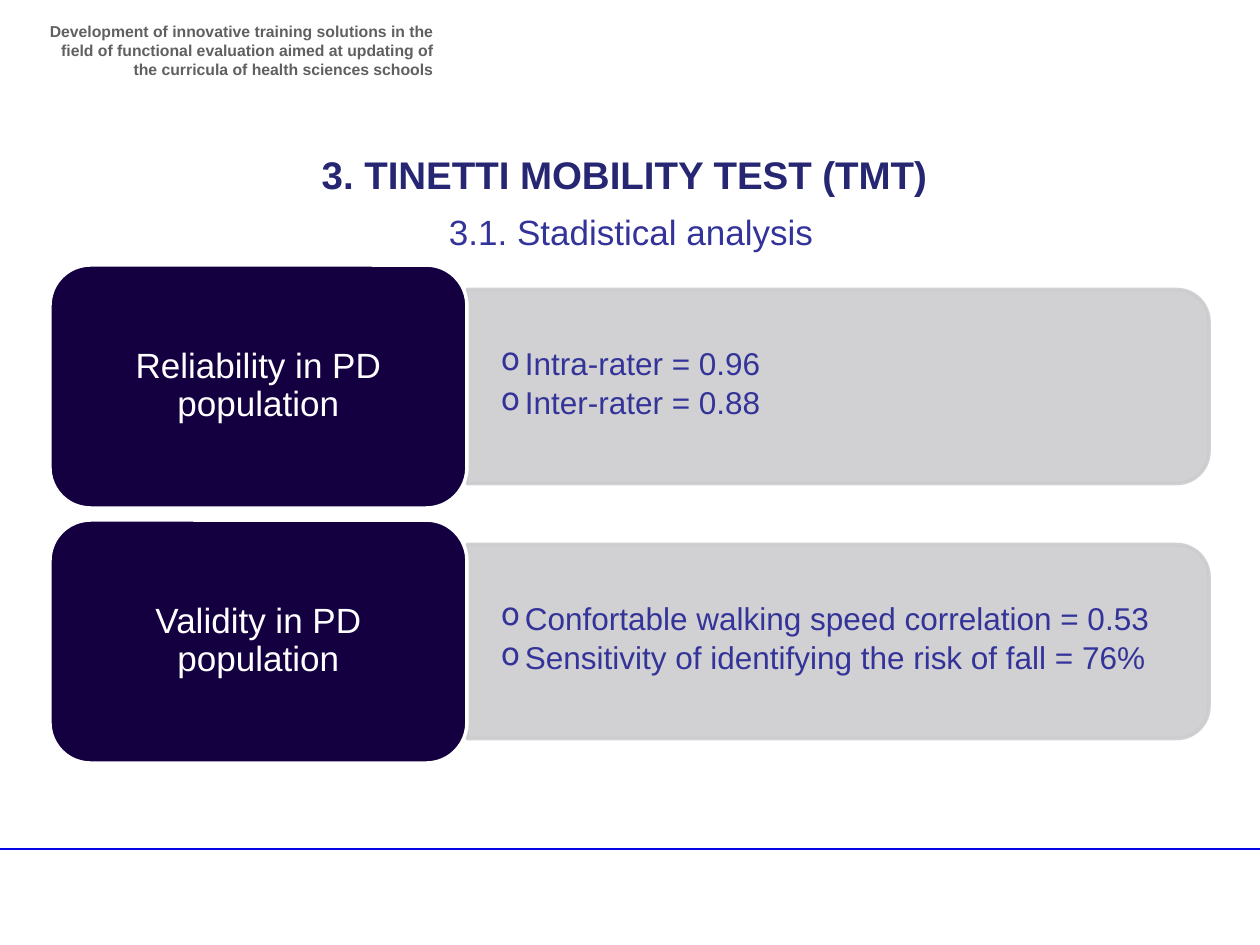
from pptx import Presentation
from pptx.dml.color import RGBColor
from pptx.enum.shapes import MSO_CONNECTOR, MSO_SHAPE
from pptx.enum.text import MSO_ANCHOR, MSO_AUTO_SIZE, PP_ALIGN
from pptx.oxml.ns import qn
from pptx.util import Emu, Pt
from lxml.etree import SubElement

PX_PER_INCH = 126
FONT = "Arial"
WHITE = RGBColor(0xFF, 0xFF, 0xFF)
GREY = RGBColor(0x60, 0x60, 0x60)
PANEL = RGBColor(0xCC, 0xCC, 0xCF)
NAVY = RGBColor(0x26, 0x26, 0x73)
INDIGO = RGBColor(0x33, 0x33, 0x99)
CARD = RGBColor(0x14, 0x00, 0x41)
RULE = RGBColor(0x04, 0x04, 0xE6)

ROWS = [
    ("Reliability in PD population",
     ["Intra-rater = 0.96", "Inter-rater = 0.88"]),
    ("Validity in PD population",
     ["Confortable walking speed correlation = 0.53",
      "Sensitivity of identifying the risk of fall = 76%"]),
]


def px(length):
    return Emu(round(length * 914400 / PX_PER_INCH))


def box_emu(*box):
    return [px(length) for length in box]


def write(holder, lines, size, color, bold=False, align=PP_ALIGN.LEFT,
          anchor=MSO_ANCHOR.TOP, insets=(13, 6), bullet=None, indent=0,
          line_spacing=None, gap=0):
    """Fill a shape's text frame with formatted paragraphs."""
    frame = holder.text_frame
    frame.word_wrap = True
    frame.auto_size = MSO_AUTO_SIZE.NONE
    frame.vertical_anchor = anchor
    frame.margin_left = frame.margin_right = px(insets[0])
    frame.margin_top = frame.margin_bottom = px(insets[1])
    for index, line in enumerate(lines):
        paragraph = frame.add_paragraph() if index else frame.paragraphs[0]
        paragraph.text = line
        if bullet:
            properties = paragraph._p.get_or_add_pPr()
            properties.set("marL", str(px(indent)))
            properties.set("indent", str(-px(indent)))
            SubElement(properties, qn("a:buChar"), char=bullet)
            paragraph.level = 1
        paragraph.alignment = align
        paragraph.line_spacing = line_spacing
        paragraph.space_before = Pt(0)
        paragraph.space_after = Pt(gap)
        font = paragraph.runs[0].font
        font.name, font.size, font.bold = FONT, Pt(size), bold
        font.color.rgb = color


def add_text(slide, box, lines, **text_format):
    write(slide.shapes.add_textbox(*box_emu(*box)), lines, **text_format)


def add_block(slide, preset, box, fill, line):
    block = slide.shapes.add_shape(preset, *box_emu(*box))
    block.shadow.inherit = False
    block.fill.solid()
    block.fill.fore_color.rgb = fill
    block.line.color.rgb = line
    block.line.width = Pt(2)
    return block


def add_heading(slide, left, top, width):
    title = slide.shapes.title
    title.left, title.top, title.width, title.height = box_emu(
        left, top, width, 59)
    write(title, ["3. TINETTI MOBILITY TEST (TMT)"], size=22, color=NAVY,
          bold=True, align=PP_ALIGN.CENTER)
    add_text(slide, (left + 352, top + 59, 392, 97),
             ["3.1. Stadistical analysis"], size=20, color=INDIGO)


def add_row(slide, left, top, width, height, label, findings):
    label_width = 417
    panel_left, panel_width = left + label_width, width - label_width
    panel_height = 194
    panel_top = top + (height - panel_height) / 2

    # Findings panel: turned a quarter so its round corners face right
    turn = (panel_width - panel_height) / 2
    panel = add_block(slide, MSO_SHAPE.ROUND_2_SAME_RECTANGLE,
                      (panel_left + turn, panel_top - turn,
                       panel_height, panel_width), PANEL, PANEL)
    panel.rotation = 90
    for tint in panel._element.spPr.iter(qn("a:srgbClr")):
        SubElement(tint, qn("a:alpha"), val="90000")
    add_text(slide, (panel_left, panel_top + 8, panel_width - 10, 175),
             findings, size=18, color=INDIGO, anchor=MSO_ANCHOR.MIDDLE,
             insets=(34, 18), bullet="o", indent=24, line_spacing=0.9, gap=3)

    # Label card
    card = add_block(slide, MSO_SHAPE.ROUNDED_RECTANGLE,
                     (left, top, label_width, height), CARD, WHITE)
    write(card, [label], size=20, color=WHITE, align=PP_ALIGN.CENTER,
          anchor=MSO_ANCHOR.MIDDLE, insets=(10, 5), line_spacing=0.9)


def add_rows(slide, left, top, width, row_height, pitch):
    for index, (label, findings) in enumerate(ROWS):
        add_row(slide, left, top + index * pitch, width, row_height,
                label, findings)


def add_frame(slide, width):
    # Project name and footer rule
    add_text(slide, (35, 16, 411, 59),
             ["Development of innovative training solutions in the ﬁeld of "
              "functional evaluation aimed at updating of the curricula of "
              "health sciences schools"],
             size=9, color=GREY, bold=True, align=PP_ALIGN.RIGHT)
    rule = slide.shapes.add_connector(MSO_CONNECTOR.STRAIGHT,
                                      *box_emu(0, 849, width, 849))
    rule.line.color.rgb = RULE
    rule.line.width = Pt(1)
    SubElement(rule._element.spPr, qn("a:effectLst"))


def main():
    deck = Presentation()
    deck.slide_width, deck.slide_height = box_emu(1260, 945)
    slide = deck.slides.add_slide(deck.slide_layouts[5])
    add_frame(slide, 1260)
    add_rows(slide, left=50, top=265, width=1159, row_height=243, pitch=255)
    add_heading(slide, left=84, top=145, width=1081)
    deck.save("out.pptx")


if __name__ == "__main__":
    main()
